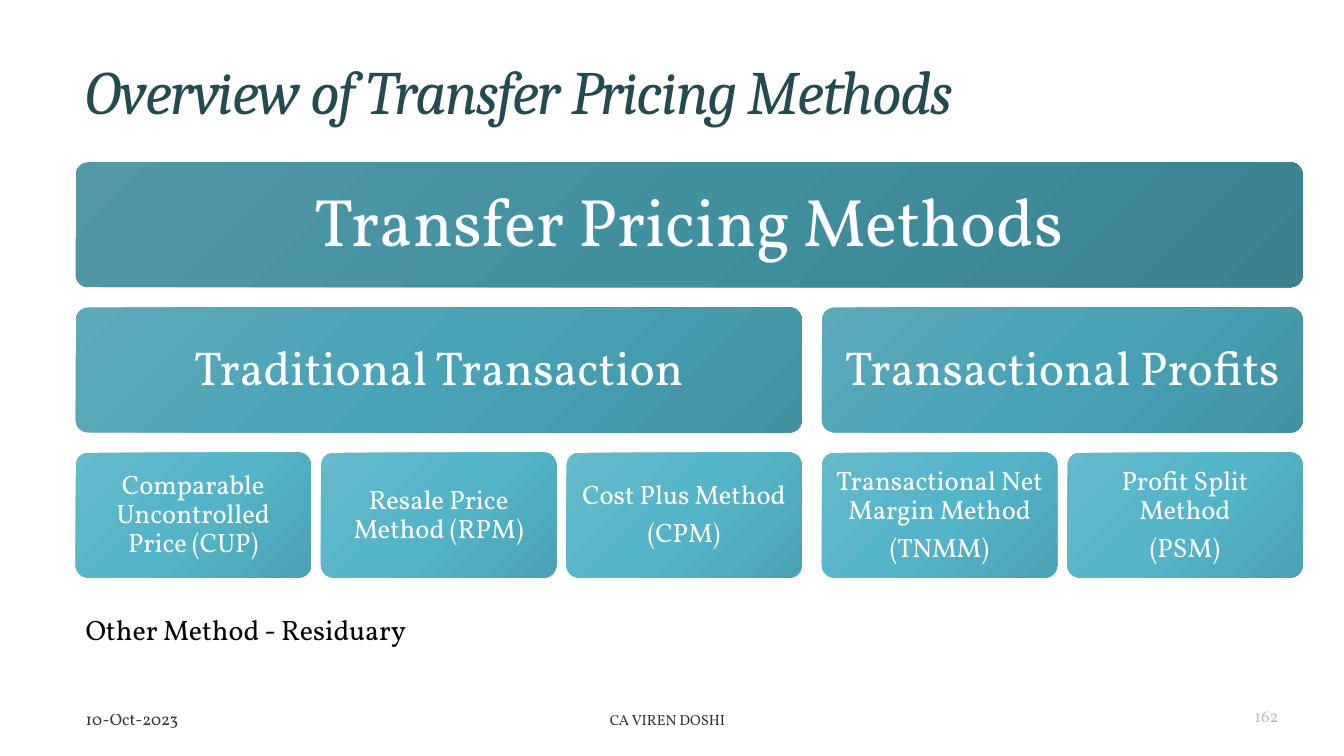
from copy import deepcopy

from lxml import etree
from pptx import Presentation
from pptx.dml.color import RGBColor
from pptx.enum.shapes import MSO_SHAPE
from pptx.enum.text import MSO_ANCHOR, MSO_AUTO_SIZE, PP_ALIGN
from pptx.oxml.ns import qn
from pptx.util import Inches, Pt

ROUNDED = MSO_SHAPE.ROUNDED_RECTANGLE
MIDDLE, BOTTOM = MSO_ANCHOR.MIDDLE, MSO_ANCHOR.BOTTOM
LEFT, CENTER, RIGHT = PP_ALIGN.LEFT, PP_ALIGN.CENTER, PP_ALIGN.RIGHT
NO_AUTOFIT = MSO_AUTO_SIZE.NONE

WHITE = RGBColor(0xFF, 0xFF, 0xFF)
BLACK = RGBColor(0x00, 0x00, 0x00)
DARK_TEAL = RGBColor(0x23, 0x4B, 0x52)
ROOT_TEALS = (RGBColor(0x52, 0x98, 0xA7), RGBColor(0x40, 0x90, 0xA0), RGBColor(0x3A, 0x82, 0x90))
FAMILY_TEALS = (RGBColor(0x5B, 0xA9, 0xBA), RGBColor(0x49, 0xA3, 0xB6), RGBColor(0x41, 0x93, 0xA3))
METHOD_TEALS = (RGBColor(0x65, 0xBA, 0xCC), RGBColor(0x54, 0xB5, 0xC9), RGBColor(0x4B, 0xA3, 0xB5))

HEADING_FONT, BODY_FONT = "Cambria", "Vollkorn"

FAMILIES = [
    ("Traditional Transaction", [
        ["Comparable Uncontrolled Price (CUP)"],
        ["Resale Price Method (RPM)"],
        ["Cost Plus Method", "(CPM)"],
    ]),
    ("Transactional Profits", [
        ["Transactional Net Margin Method", "(TNMM)"],
        ["Profit Split Method", "(PSM)"],
    ]),
]


class MethodsPage:
    """Five method columns in families, with one row per level of the hierarchy."""

    left, top, width = 0.75, 1.61, 12.17
    row_height, row_gap = 1.24, 0.2
    column_gap, family_gap = 0.1, 0.2
    column_width = (width - 3 * column_gap - family_gap) / 5

    def __init__(self, deck):
        self.page = deck.slides.add_slide(deck.slide_layouts[5])

    def column_left(self, column, family):
        pitch = self.column_width + self.column_gap
        return self.left + column * pitch + family * (self.family_gap - self.column_gap)

    def span_width(self, columns):
        return columns * (self.column_width + self.column_gap) - self.column_gap

    def add_span(self, para, text, size, color, font=BODY_FONT, opacity=None):
        span = para.add_run()
        span.text = text
        span.font.name = font
        span.font.size = Pt(size)
        span.font.color.rgb = color
        if opacity:
            color_xml = span.font._element.find(".//" + qn("a:srgbClr"))
            etree.SubElement(color_xml, qn("a:alpha"), val=str(opacity * 1000))
        return span

    def title(self, text):
        box = self.page.shapes.title
        box.left, box.top = Inches(self.left), Inches(0.04)
        box.width, box.height = Inches(11.75), Inches(1.81)
        frame = box.text_frame
        frame.auto_size = NO_AUTOFIT
        frame.vertical_anchor = MIDDLE
        para = frame.paragraphs[0]
        para.alignment = LEFT
        para.line_spacing = 0.85
        span = self.add_span(para, text, 44, DARK_TEAL, HEADING_FONT)
        span.font.italic = True
        span.font._element.set("spc", "-120")

    def gradient(self, box, colors):
        """Fill with evenly spaced colours from top left to bottom right."""
        fill = box.fill
        fill.gradient()
        fill.gradient_angle = 315
        stop_list = box._element.spPr.find(".//" + qn("a:gsLst"))
        stop_list.append(deepcopy(stop_list[-1]))
        for index, (stop, color) in enumerate(zip(fill.gradient_stops, colors)):
            stop.color.rgb = color
            stop.position = index / (len(colors) - 1)

    def card(self, left, row, width, lines, size, inset, colors):
        top = self.top + row * (self.row_height + self.row_gap)
        box = self.page.shapes.add_shape(
            ROUNDED, Inches(left), Inches(top), Inches(width), Inches(self.row_height))
        box.adjustments[0] = 0.1
        box.shadow.inherit = False
        box.line.fill.background()
        self.gradient(box, colors)
        frame = box.text_frame
        frame.word_wrap = True
        frame.vertical_anchor = MIDDLE
        frame.margin_left = frame.margin_right = Inches(inset)
        frame.margin_top = frame.margin_bottom = Inches(inset)
        for index, line in enumerate(lines):
            para = frame.add_paragraph() if index else frame.paragraphs[0]
            para.alignment = CENTER
            para.line_spacing = 0.9
            para.space_after = Pt(0)
            space_after = para._p.pPr.find(qn("a:spcAft"))
            space_after.clear()
            etree.SubElement(space_after, qn("a:spcPct"), val="35000")
            self.add_span(para, line, size, WHITE)

    def label(self, left, top, width, height, text, size, align=LEFT, anchor=MIDDLE, opacity=None):
        box = self.page.shapes.add_textbox(
            Inches(left), Inches(top), Inches(width), Inches(height))
        frame = box.text_frame
        frame.word_wrap = True
        frame.vertical_anchor = anchor
        para = frame.paragraphs[0]
        para.alignment = align
        self.add_span(para, text, size, BLACK, opacity=opacity)


def main():
    deck = Presentation()
    deck.slide_width, deck.slide_height = Inches(13.33), Inches(7.5)
    page = MethodsPage(deck)

    page.title("Overview of Transfer Pricing Methods")
    page.card(page.left, 0, page.width, ["Transfer Pricing Methods"], 48, 0.2, ROOT_TEALS)
    column = 0
    for family, (name, methods) in enumerate(FAMILIES):
        page.card(page.column_left(column, family), 1, page.span_width(len(methods)),
                  [name], 34, 0.14, FAMILY_TEALS)
        for lines in methods:
            page.card(page.column_left(column, family), 2, page.column_width,
                      lines, 19, 0.08, METHOD_TEALS)
            column += 1

    page.label(page.left, 5.92, page.width, 0.64, "Other Method - Residuary", 20)
    page.label(page.left, 7.01, 4.5, 0.25, "10-Oct-2023", 12, opacity=80)
    page.label(3.87, 7.01, 5.5, 0.25, "CA VIREN DOSHI", 10.5, CENTER, opacity=80)
    page.label(9.7, 7.01, 3.08, 0.24, "162", 12, RIGHT, BOTTOM, opacity=25)

    deck.save("out.pptx")


if __name__ == "__main__":
    main()
